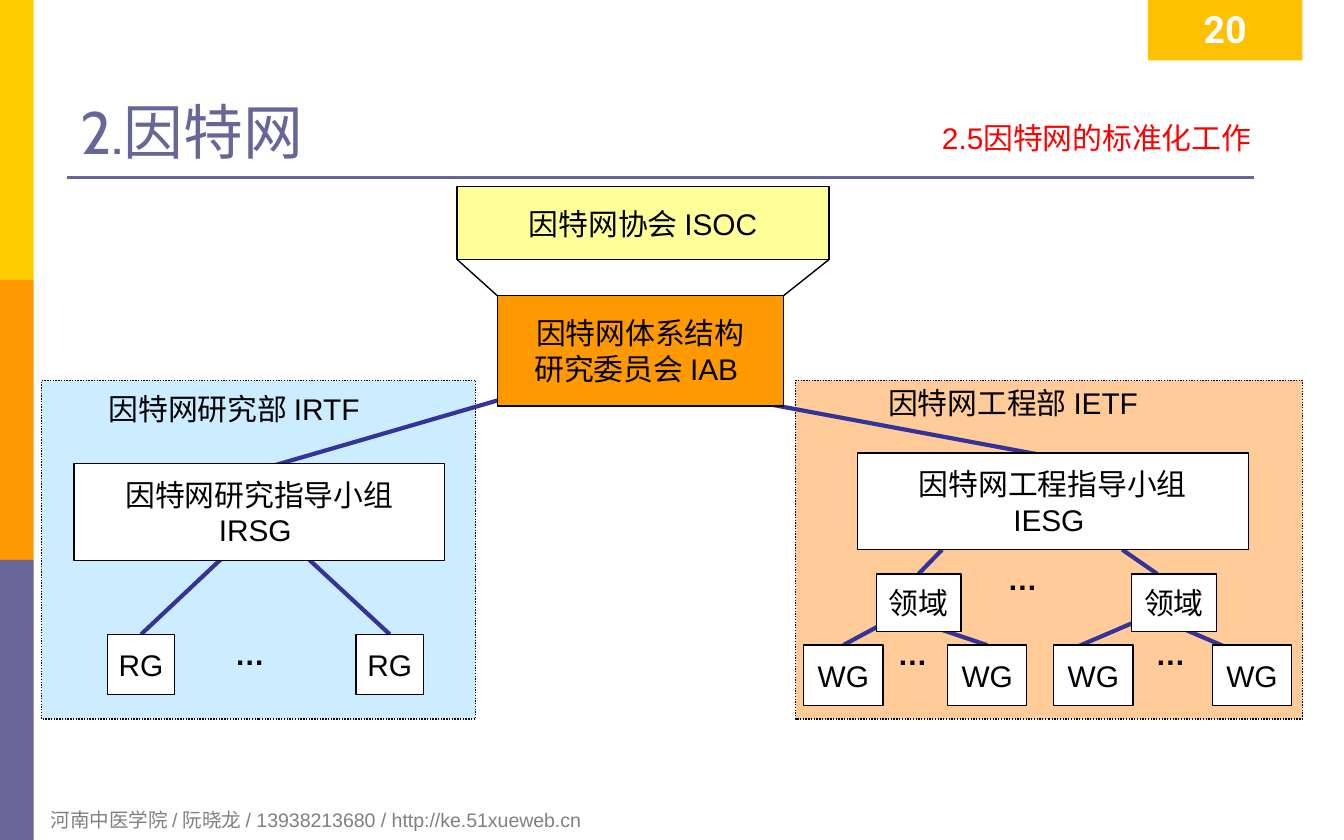
from pptx import Presentation
from pptx.dml.color import RGBColor
from pptx.enum.dml import MSO_LINE
from pptx.enum.shapes import MSO_CONNECTOR, MSO_SHAPE
from pptx.enum.text import MSO_ANCHOR as ANCHOR, PP_ALIGN as ALIGN
from pptx.oxml.ns import qn
from pptx.util import Inches, Pt
from lxml import etree

SLIDE_WIDTH, SLIDE_HEIGHT = 10, 6.25
BLACK, WHITE, NAVY, SLATE, ORANGE = "000000", "FFFFFF", "333399", "666699", "FF9900"
TOP = 0

SIDEBAR_COLORS = ["FFCC00", ORANGE, SLATE]

# text, (left, top, width, height), size, font, color, alignment, anchor
HEADINGS = [
    ("河南中医学院 / 阮晓龙 / 13938213680 / http://ke.51xueweb.cn",
     (0.28, 5.96, 6.77, 0.28), 10.5, "Arial", "808080", ALIGN.LEFT, ANCHOR.TOP),
    ("2.因特网", (0.5, 0.25, 9, 1.04), 32, "Cabin", SLATE, ALIGN.LEFT, ANCHOR.BOTTOM),
    ("2.5因特网的标准化工作", (6.26, 0.84, 3.15, 0.39), 16, "Arial", "FF0000",
     ALIGN.RIGHT, ANCHOR.TOP),
]

# (left, top, width, height), fill
PANELS = [
    ((0.31, 2.83, 3.23, 2.52), "CCECFF"),
    ((5.92, 2.83, 3.77, 2.52), "FFCC99"),
]

# name: text, (left, top), (width, height), fill
RG_SIZE, AREA_SIZE, WG_SIZE = (0.5, 0.45), (0.63, 0.43), (0.59, 0.45)
BOXES = {
    "ISOC": ("因特网协会 ISOC", (3.4, 1.39), (2.77, 0.54), "FFFF99"),
    "IAB": ("因特网体系结构\n研究委员会 IAB ", (3.7, 2.2), (2.13, 0.82), ORANGE),
    "IRSG": ("因特网研究指导小组\nIRSG ", (0.55, 3.45), (2.76, 0.72), WHITE),
    "IESG": ("因特网工程指导小组\nIESG ", (6.38, 3.37), (2.91, 0.72), WHITE),
    "RG 1": ("RG", (0.8, 4.72), RG_SIZE, WHITE),
    "RG 2": ("RG", (2.65, 4.72), RG_SIZE, WHITE),
    "Area 1": ("领域", (6.52, 4.27), AREA_SIZE, WHITE),
    "Area 2": ("领域", (8.42, 4.27), AREA_SIZE, WHITE),
    "WG 1": ("WG", (5.98, 4.8), WG_SIZE, WHITE),
    "WG 2": ("WG", (7.05, 4.8), WG_SIZE, WHITE),
    "WG 3": ("WG", (7.84, 4.8), WG_SIZE, WHITE),
    "WG 4": ("WG", (9.02, 4.8), WG_SIZE, WHITE),
}

# start, end, color, width, box whose top middle the line ends at
LINKS = [
    ((3.4, 1.93), (3.7, 2.2), BLACK, 0.75, None),
    ((6.17, 1.93), (5.83, 2.2), BLACK, 0.75, None),
    ((3.7, 2.98), (2.05, 3.46), NAVY, 2.25, None),
    ((5.25, 2.92), (7.72, 3.38), NAVY, 2.25, None),
    ((1.72, 4.09), (1.05, 4.72), NAVY, 2.25, "RG 1"),
    ((2.22, 4.09), (2.9, 4.72), NAVY, 2.25, "RG 2"),
    ((7.01, 4.09), (6.84, 4.27), NAVY, 2.25, "Area 1"),
    ((8.35, 4.09), (8.61, 4.27), NAVY, 2.25, None),
    ((6.59, 4.63), (6.26, 4.8), NAVY, 2.25, "WG 1"),
    ((6.84, 4.63), (7.35, 4.8), NAVY, 2.25, "WG 2"),
    ((8.44, 4.63), (8.02, 4.81), NAVY, 2.25, None),
    ((8.69, 4.63), (9.11, 4.81), NAVY, 2.25, None),
]

# text, (left, top, width, height)
PANEL_TITLES = [
    ("因特网研究部 IRTF", (0.71, 2.86, 2.17, 0.37)),
    ("因特网工程部 IETF", (6.51, 2.81, 2.16, 0.37)),
]
ELLIPSES = [(1.65, 4.68), (7.4, 4.12), (6.58, 4.68), (8.5, 4.68)]


def rgb(color):
    return RGBColor.from_string(color)


def write(shape, text, size=16, font="Arial", color=BLACK, align=ALIGN.LEFT,
          anchor=ANCHOR.TOP, bold=False, wrap=False):
    frame = shape.text_frame
    frame.text = text
    frame.word_wrap = wrap
    frame.vertical_anchor = anchor
    for paragraph in frame.paragraphs:
        paragraph.alignment = align
        for run in paragraph.runs:
            run.font.size = Pt(size)
            run.font.name = font
            run.font.bold = bold
            run.font.color.rgb = rgb(color)


def add_rect(slide, bounds, fill, line=None):
    shape = slide.shapes.add_shape(MSO_SHAPE.RECTANGLE, *map(Inches, bounds))
    shape.shadow.inherit = False
    shape.fill.solid()
    shape.fill.fore_color.rgb = rgb(fill)
    if line:
        shape.line.color.rgb = rgb(line)
        shape.line.width = Pt(0.75)
    else:
        shape.line.fill.background()
    return shape


def add_text(slide, text, bounds, **style):
    write(slide.shapes.add_textbox(*map(Inches, bounds)), text, **style)


def add_line(slide, start, end, color, width):
    line = slide.shapes.add_connector(MSO_CONNECTOR.STRAIGHT, *map(Inches, start + end))
    line.line.color.rgb = rgb(color)
    line.line.width = Pt(width)
    properties = line._element.find(qn("p:spPr"))
    etree.SubElement(properties, qn("a:effectLst"))
    return line


def add_frame(slide):
    """Sidebar, title rule, headings and page number."""
    band = SLIDE_HEIGHT / len(SIDEBAR_COLORS)
    for index, color in enumerate(SIDEBAR_COLORS):
        add_rect(slide, (0, index * band, 0.25, band), color)
    add_line(slide, (0.5, 1.32), (9.33, 1.32), SLATE, 1.5)
    for text, bounds, size, font, color, align, anchor in HEADINGS:
        add_text(slide, text, bounds, size=size, font=font, color=color,
                 align=align, anchor=anchor, wrap=True)
    page_number = add_rect(slide, (8.54, 0, 1.15, 0.45), "FFC000")
    write(page_number, "20", size=20, font="Roboto", color=WHITE,
          align=ALIGN.CENTER, bold=True, wrap=True)


def add_organization(slide):
    for bounds, fill in PANELS:
        panel = add_rect(slide, bounds, fill, BLACK)
        panel.line.dash_style = MSO_LINE.ROUND_DOT
    # Lines come before the boxes so that the boxes cover their ends.
    lines = [add_line(slide, *link[:4]) for link in LINKS]
    boxes = {}
    for name, (text, position, size, fill) in BOXES.items():
        boxes[name] = add_rect(slide, position + size, fill, BLACK)
        write(boxes[name], text, align=ALIGN.CENTER, anchor=ANCHOR.MIDDLE)
    for line, link in zip(lines, LINKS):
        if link[4]:
            line.end_connect(boxes[link[4]], TOP)
    for text, bounds in PANEL_TITLES:
        add_text(slide, text, bounds)
    for position in ELLIPSES:
        add_text(slide, "…", position + (0.43, 0.37), bold=True)


def main():
    presentation = Presentation()
    presentation.slide_width = Inches(SLIDE_WIDTH)
    presentation.slide_height = Inches(SLIDE_HEIGHT)
    slide = presentation.slides.add_slide(presentation.slide_layouts[6])
    add_frame(slide)
    add_organization(slide)
    presentation.save("out.pptx")


if __name__ == "__main__":
    main()
